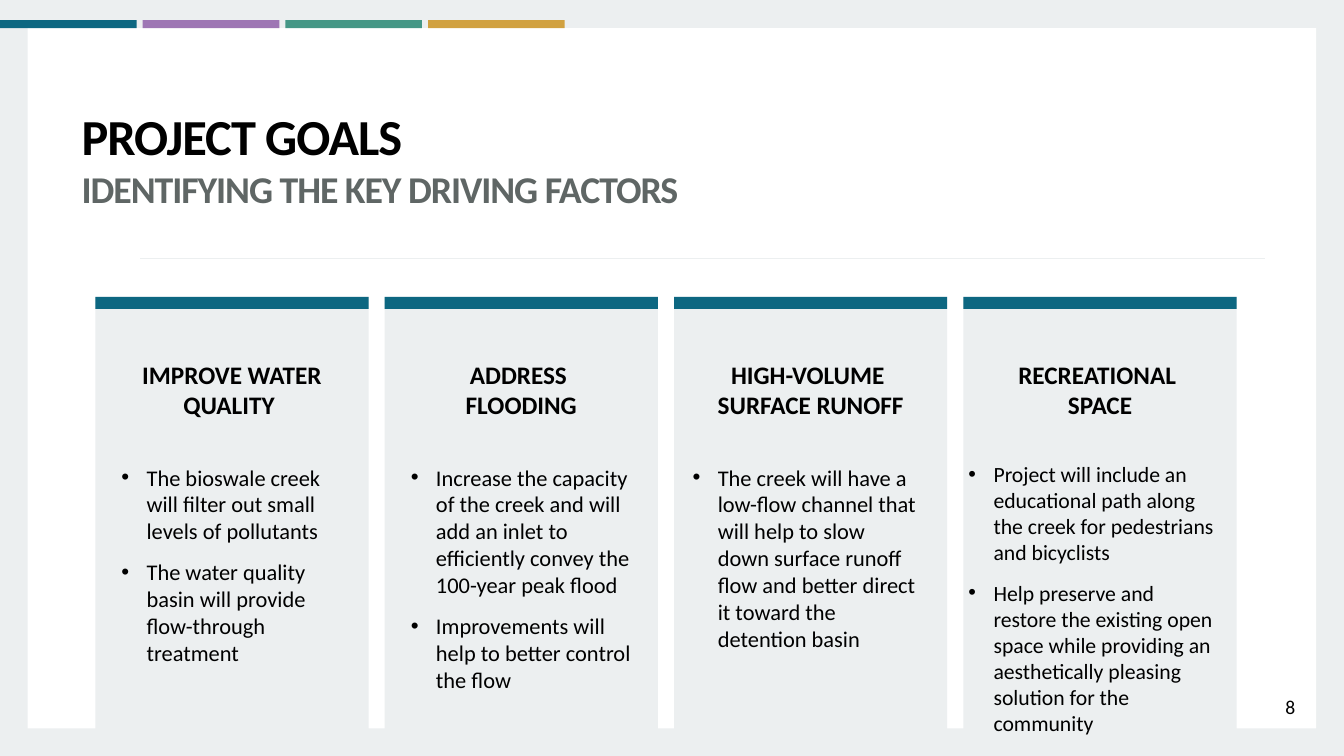
from pptx import Presentation
from pptx.dml.color import RGBColor
from pptx.enum.shapes import MSO_CONNECTOR as Connector, MSO_SHAPE as Shape
from pptx.enum.text import MSO_ANCHOR as Anchor, PP_ALIGN as Align
from pptx.oxml.ns import qn
from pptx.util import Inches, Pt
from lxml.etree import SubElement

TITLE = "PROJECT GOALS"
SUBTITLE = "IDENTIFYING THE KEY DRIVING FACTORS"
PAGE_NUMBER = "8"
GOALS = [
    {
        "heading": ["IMPROVE WATER QUALITY "],
        "bullets": [
            "The bioswale creek will filter out small levels of pollutants",
            "The water quality basin will provide flow-through treatment",
        ],
        "box": (0.42, 9.15, 4.63, 4.85),
    },
    {
        "heading": ["ADDRESS ", "FLOODING"],
        "bullets": [
            "Increase the capacity of the creek and will add an inlet to "
            "efficiently convey the 100-year peak flood",
            "Improvements will help to better control the flow",
        ],
        "box": (0.42, 9.15, 4.63, 5.04),
    },
    {
        "heading": ["HIGH-VOLUME ", "SURFACE RUNOFF"],
        "bullets": [
            "The creek will have a low-flow channel that will help to slow down "
            "surface runoff flow and better direct it toward the detention basin",
        ],
        "box": (0.27, 9.15, 4.63, 4.81),
    },
    {
        "heading": ["RECREATIONAL ", "SPACE"],
        "bullets": [
            "Project will include an educational path along the creek for "
            "pedestrians and bicyclists",
            "Help preserve and restore the existing open space while providing an "
            "aesthetically pleasing solution for the community",
        ],
        "box": (0, 9.1, 5.09, 4.85),
        "style": "compact",
    },
]

THEME = {
    "font": "Calibri",
    "pale": "ECEFF0",
    "white": "FFFFFF",
    "accents": ["0D6781", "9E76B4", "459786", "D1A140"],
    "text": {
        "title": {"size": 72, "bold": True, "color": "000000"},
        "subtitle": {"size": 54, "bold": True, "color": "5F6665"},
        "heading": {"size": 36, "bold": True, "color": "000000"},
        "body": {"size": 32, "bold": False, "color": "000000"},
        "compact": {"size": 31, "bold": False, "color": "000000"},
        "number": {"size": 28, "bold": False, "color": "000000"},
    },
}
WIDTH, HEIGHT = 26.66, 15
CARD_LEFT, CARD_TOP, CARD_WIDTH, CARD_STEP = 1.89, 5.89, 5.42, 5.74
STRIPE_WIDTH, STRIPE_STEP = 2.71, 2.83


def add_block(slide, color, *box):
    shape = slide.shapes.add_shape(Shape.RECTANGLE, *map(Inches, box))
    shape.shadow.inherit = False
    shape.fill.solid()
    shape.fill.fore_color.rgb = RGBColor.from_string(color)
    shape.line.fill.background()


def add_rule(slide, left, right, top):
    rule = slide.shapes.add_connector(
        Connector.STRAIGHT, *map(Inches, (left, top, right, top))
    )
    rule.line.color.rgb = RGBColor.from_string(THEME["pale"])
    rule.line.width = Pt(1)
    SubElement(rule._element.spPr, qn("a:effectLst"))


def add_bullet(paragraph):
    properties = paragraph._p.get_or_add_pPr()
    properties.set("marL", str(Inches(0.5)))
    properties.set("indent", str(Inches(-0.5)))
    SubElement(properties, qn("a:buFont")).set("typeface", "Arial")
    SubElement(properties, qn("a:buChar")).set("char", "•")


def add_text(slide, lines, box, align=Align.LEFT, bullets=False, spacing=None):
    frame = slide.shapes.add_textbox(*map(Inches, box)).text_frame
    frame.word_wrap = True
    frame.vertical_anchor = Anchor.TOP
    for index, (text, style) in enumerate(lines):
        paragraph = frame.paragraphs[0] if index == 0 else frame.add_paragraph()
        paragraph.alignment = align
        if bullets:
            if index:
                paragraph.space_before = Pt(20)
            add_bullet(paragraph)
        run = paragraph.add_run()
        run.text = text
        look = THEME["text"][style]
        values = {
            "name": THEME["font"],
            "size": Pt(look["size"]),
            "bold": look["bold"],
        }
        for name, value in values.items():
            setattr(run.font, name, value)
        run.font.color.rgb = RGBColor.from_string(look["color"])
        if spacing is not None:
            run._r.get_or_add_rPr().set("spc", str(int(spacing * 100)))


def add_goal(slide, left, goal):
    add_block(slide, THEME["pale"], left, CARD_TOP, CARD_WIDTH, HEIGHT - CARD_TOP)
    add_block(slide, THEME["accents"][0], left, CARD_TOP, CARD_WIDTH, 0.24)
    heading = [(line, "heading") for line in goal["heading"]]
    add_text(slide, heading, (left, 7.08, CARD_WIDTH, 1.31), Align.CENTER)
    offset, *rest = goal["box"]
    bullets = [(line, goal.get("style", "body")) for line in goal["bullets"]]
    add_text(slide, bullets, (left + offset, *rest), bullets=True)


def main():
    presentation = Presentation()
    presentation.slide_width = Inches(WIDTH)
    presentation.slide_height = Inches(HEIGHT)
    slide = presentation.slides.add_slide(presentation.slide_layouts[6])

    add_block(slide, THEME["pale"], 0, 0, WIDTH, HEIGHT)
    add_block(slide, THEME["white"], 0.55, 0.56, 25.56, 13.89)
    for index, color in enumerate(THEME["accents"]):
        add_block(slide, color, index * STRIPE_STEP, 0.4, STRIPE_WIDTH, 0.16)
    add_rule(slide, 2.78, 25.09, 5.12)
    add_text(slide, [(PAGE_NUMBER, "number")], (25.2, 13.74, 0.79, 0.57), Align.CENTER)
    title = [(TITLE, "title"), (SUBTITLE, "subtitle")]
    add_text(slide, title, (1.52, 2.04, 13.89, 2.5), spacing=-1.5)
    for index, goal in enumerate(GOALS):
        add_goal(slide, CARD_LEFT + index * CARD_STEP, goal)

    presentation.save("out.pptx")


if __name__ == "__main__":
    main()
